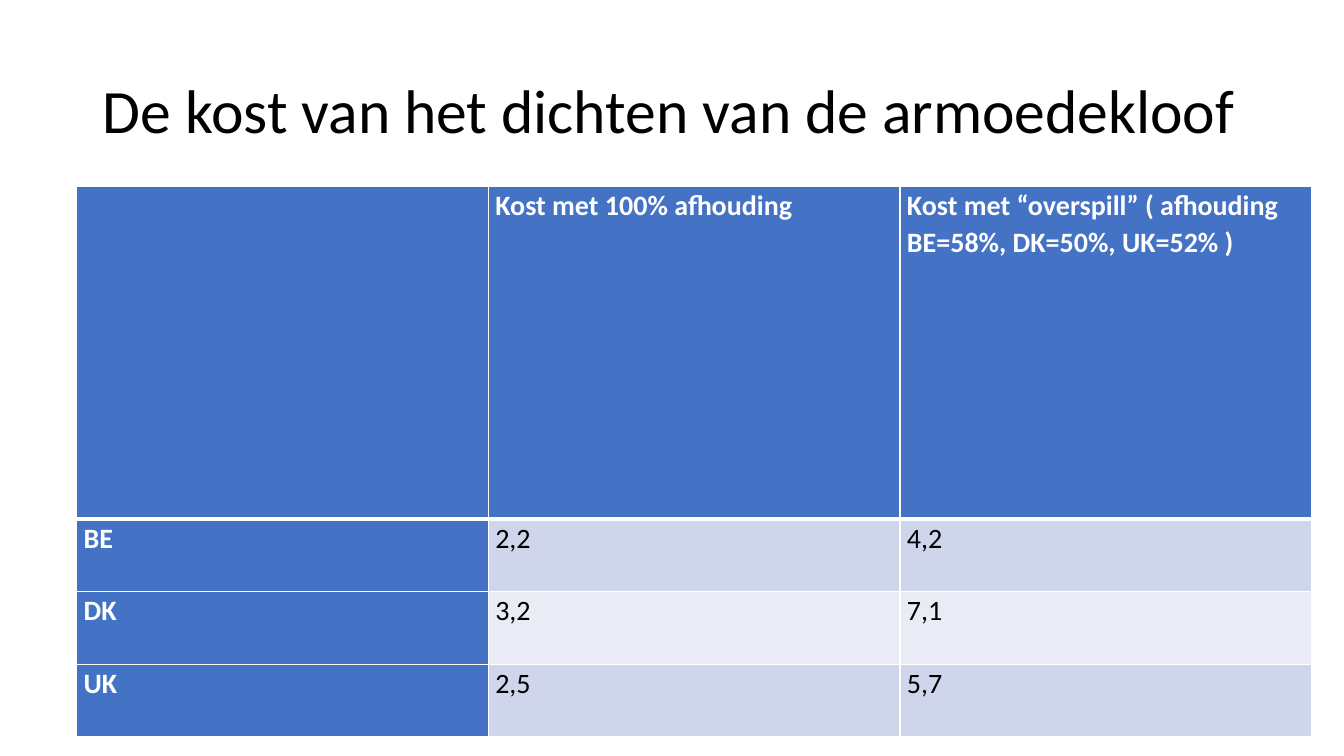
from pptx import Presentation
from pptx.dml.color import RGBColor
from pptx.enum.text import MSO_ANCHOR, MSO_AUTO_SIZE, PP_ALIGN
from pptx.oxml import parse_xml
from pptx.oxml.ns import nsdecls
from pptx.util import Inches, Pt

TITLE = "De kost van het dichten van de armoedekloof"
ROWS = [
    ("", "Kost met 100% afhouding",
     "Kost met “overspill” ( afhouding BE=58%, DK=50%, UK=52% )"),
    ("BE", "2,2", "4,2"),
    ("DK", "3,2", "7,1"),
    ("UK", "2,5", "5,7"),
]
HEIGHTS = [3.3] + [0.72] * 3
WIDTH = 12.25
BLUE, WHITE, BLACK = "4472C4", "FFFFFF", "000000"
BANDS = ("E9EBF5", "CFD5EA")


def color(value):
    return RGBColor.from_string(value)


def style(para, size, tint, bold=False):
    font = para.font
    font.name = "Calibri"
    font.size = Pt(size)
    font.bold = bold
    font.color.rgb = color(tint)


def edge(cell, sides):
    props = cell._tc.get_or_add_tcPr()
    for spot, (side, width) in enumerate(sides.items()):
        props.insert(spot, parse_xml(
            f'<a:ln{side} {nsdecls("a")} w="{Pt(width)}"><a:solidFill>'
            f'<a:srgbClr val="{WHITE}"/></a:solidFill></a:ln{side}>'))


def put_title(slide):
    title = slide.shapes.title
    title.left, title.top = Inches(0.92), Inches(0.4)
    title.width, title.height = Inches(11.5), Inches(1.45)
    frame = title.text_frame
    frame.text = TITLE
    frame.word_wrap = True
    frame.auto_size = MSO_AUTO_SIZE.NONE
    frame.vertical_anchor = MSO_ANCHOR.MIDDLE
    para = frame.paragraphs[0]
    para.alignment = PP_ALIGN.LEFT
    para.line_spacing = 0.9
    style(para, 44, BLACK)


def put_table(slide):
    count = len(ROWS[0])
    table = slide.shapes.add_table(
        len(ROWS), count, Inches(0.76), Inches(1.85),
        Inches(WIDTH), Inches(sum(HEIGHTS))).table
    table.first_col = True
    for col in table.columns:
        col.width = Inches(WIDTH / count)
    for r, (texts, height) in enumerate(zip(ROWS, HEIGHTS)):
        table.rows[r].height = Inches(height)
        for c, text in enumerate(texts):
            cell = table.cell(r, c)
            head = r == 0 or c == 0
            cell.fill.solid()
            cell.fill.fore_color.rgb = color(BLUE if head else BANDS[r % 2])
            cell.margin_left = cell.margin_right = Inches(0.07)
            cell.margin_top = cell.margin_bottom = 0
            edge(cell, {"L": 1, "R": 1, "T": 3 if r == 1 else 1,
                        "B": 3 if r == 0 else 1})
            cell.text = text
            para = cell.text_frame.paragraphs[0]
            para.line_spacing = 1.07
            para.space_after = Pt(8)
            style(para, 20, WHITE if head else BLACK, head)


def main():
    deck = Presentation()
    deck.slide_width, deck.slide_height = Inches(13.33), Inches(7.5)
    slide = deck.slides.add_slide(deck.slide_layouts[5])
    put_title(slide)
    put_table(slide)
    deck.save("out.pptx")


if __name__ == "__main__":
    main()
